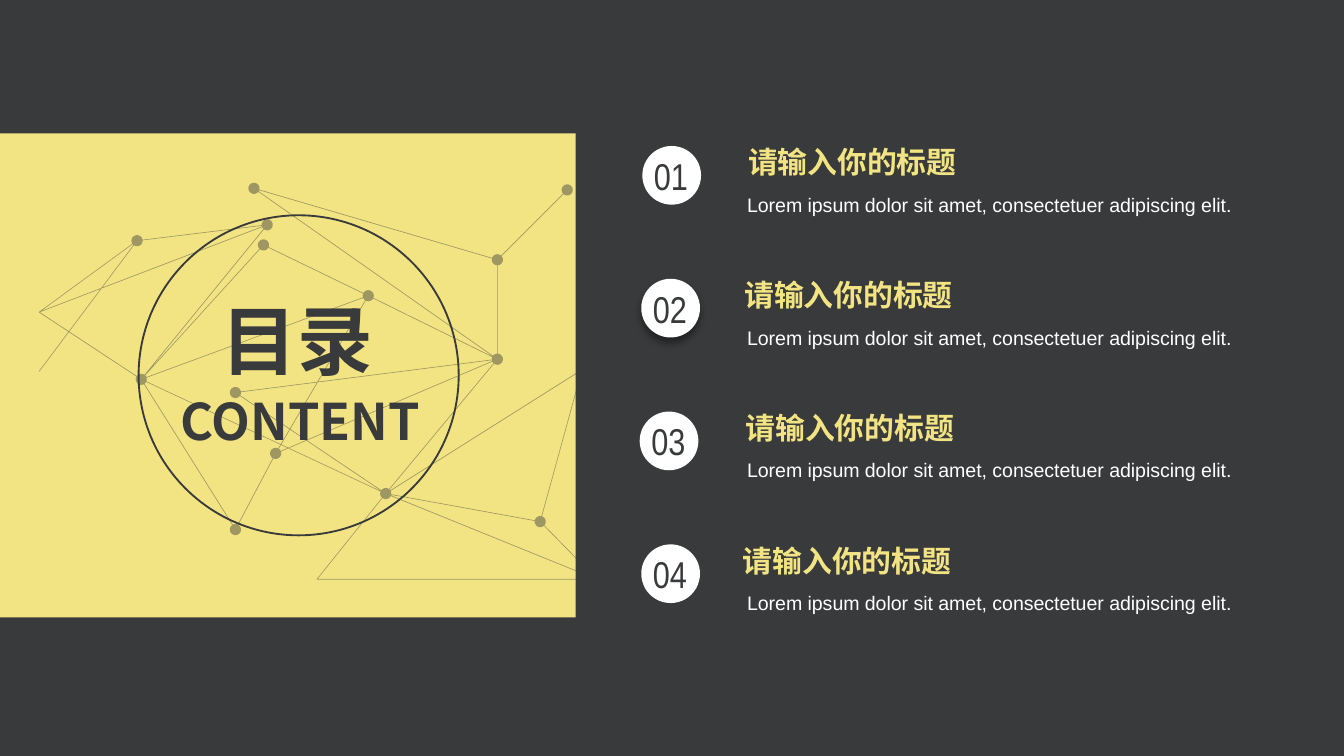
from dataclasses import dataclass
from math import cos, hypot, pi, sin

from lxml.etree import SubElement
from pptx import Presentation
from pptx.dml.color import RGBColor as RGB
from pptx.enum.shapes import MSO_SHAPE as Shape
from pptx.enum.text import MSO_ANCHOR as Anchor, MSO_AUTO_SIZE as Fit, PP_ALIGN as Align
from pptx.oxml.ns import qn
from pptx.util import Cm, Pt


@dataclass(frozen=True)
class Theme:
    dark: RGB = RGB(0x38, 0x3A, 0x3B)
    gold: RGB = RGB(0xF3, 0xE4, 0x83)
    white: RGB = RGB(0xFF, 0xFF, 0xFF)
    han: str = "Noto Sans CJK SC"
    sans: str = "Arial"
    slim: str = "Arial Narrow"
    title: float = 40.5
    sub: float = 27
    num: float = 20
    head: float = 16
    body: float = 10.5


T = Theme()

# Points of the line web, in cm from the panel's corner
DOTS = {
    "a": (4.80, 1.04), "b": (5.05, 1.73), "c": (4.98, 2.11), "d": (6.96, 3.07),
    "e": (9.40, 2.39), "f": (10.72, 1.07), "g": (9.40, 4.27), "h": (2.59, 2.03),
    "i": (2.67, 4.65), "j": (4.45, 4.90), "k": (5.21, 6.05), "l": (4.45, 7.49),
    "m": (7.29, 6.81), "n": (10.21, 7.34), "o": (11.00, 4.47),
}
ENDS = {"p": (0.74, 3.38), "q": (0.74, 4.50), "r": (5.99, 8.43), "s": (11.28, 8.43)}
EDGES = ("ae ag ef eg dg cd ci bi bh hp hq pb pi id jg jm il im dk kl kg "
         "mg mo mn mr ms rs ns no os").split()

HEAD = "请输入你的标题"
BODY = "Lorem ipsum dolor sit amet, consectetuer adipiscing elit."
# Left shift of each row's disc and heading, in cm
ROWS = [(0.05, 0.10), (0.03, 0.03), (0, 0.05), (0.03, 0)]


def place(shape, x, y, w, h):
    shape.left, shape.top, shape.width, shape.height = Cm(x), Cm(y), Cm(w), Cm(h)


def write(shape, text, font, size, color, bold=False, align=Align.LEFT):
    frame = shape.text_frame
    frame.text = text
    frame.word_wrap = True
    frame.auto_size = Fit.NONE
    frame.vertical_anchor = Anchor.MIDDLE
    para = frame.paragraphs[0]
    para.alignment = align
    run = para.runs[0]
    run.font.name, run.font.size, run.font.bold = font, Pt(size), bold
    run.font.color.rgb = color
    SubElement(run.font._element, qn("a:ea"), typeface=font)


def label(shapes, box, *args, **style):
    write(shapes.add_textbox(*map(Cm, box)), *args, **style)


def solid(shape, color):
    shape.shadow.inherit = False
    shape.fill.solid()
    shape.fill.fore_color.rgb = color
    shape.line.fill.background()


def web(shapes, left, top):
    """Draw the dots and the thin lines between them as one outline."""
    radius, half = 0.105, 0.006
    loops = [[(x + radius * cos(n * pi / 12), y + radius * sin(n * pi / 12))
              for n in range(24)] for x, y in DOTS.values()]
    points = DOTS | ENDS
    for a, b in EDGES:
        (x1, y1), (x2, y2) = points[a], points[b]
        size = hypot(x2 - x1, y2 - y1)
        ux, uy = (x2 - x1) / size, (y2 - y1) / size
        # Lines stop at the rim of a dot
        gap1, gap2 = (radius if key in DOTS else 0 for key in (a, b))
        x1, y1 = x1 + ux * gap1, y1 + uy * gap1
        x2, y2 = x2 - ux * gap2, y2 - uy * gap2
        dx, dy = -uy * half, ux * half
        loops.append([(x1 + dx, y1 + dy), (x2 + dx, y2 + dy),
                      (x2 - dx, y2 - dy), (x1 - dx, y1 - dy)])
    loops = [[(Cm(left + x), Cm(top + y)) for x, y in loop] for loop in loops]
    pen = shapes.build_freeform(*loops[0][0])
    for n, loop in enumerate(loops):
        if n:
            pen.move_to(*loop[0])
        pen.add_line_segments(loop[1:], close=True)
    net = pen.convert_to_shape()
    solid(net, T.dark)
    tint = net._element.spPr.find(qn("a:solidFill"))[0]
    SubElement(tint, qn("a:alpha"), val="45000")


def panel(slide, x, y, w, h):
    shapes = slide.shapes
    solid(shapes.add_shape(Shape.RECTANGLE, Cm(x), Cm(y), Cm(w), Cm(h)), T.gold)
    ring = shapes.add_shape(Shape.OVAL, Cm(x + 2.62), Cm(y + 1.55), Cm(6.05), Cm(6.05))
    ring.shadow.inherit = False
    ring.fill.background()
    ring.line.color.rgb = T.dark
    ring.line.width = Pt(1)
    web(shapes, x, y)
    title = shapes.title
    place(title, x + 3.07, y + 2.9, 5.11, 1.98)
    write(title, "目录", T.han, T.title, T.dark, True, Align.CENTER)
    shapes._spTree.append(title._element)  # bring in front of the panel
    label(shapes, (x + 3.02, y + 4.72, 5.31, 1.42), "CONTENT",
          T.han, T.sub, T.dark, bold=True, align=Align.CENTER)


def shade(shape):
    """Give the shape a soft shadow straight below it."""
    fx = shape._element.spPr.find(qn("a:effectLst"))
    drop = SubElement(fx, qn("a:outerShdw"), blurRad=str(Pt(4)), dist=str(Pt(3)),
                      dir="5400000", algn="t", rotWithShape="0")
    tint = SubElement(drop, qn("a:srgbClr"), val="000000")
    SubElement(tint, qn("a:alpha"), val="40000")


def entry(slide, x, y, num, disc_dx, head_dx):
    badge = slide.shapes.add_group_shape().shapes
    left = x + disc_dx
    disc = badge.add_shape(Shape.OVAL, Cm(left), Cm(y), Cm(1.11), Cm(1.11))
    solid(disc, T.white)
    if num == 2:
        shade(disc)
    label(badge, (left - 0.03, y, 1.24, 1.11), f"{num:02}", T.slim, T.num, T.dark)
    label(slide.shapes, (x + 1.78, y + 0.75, 11.5, 0.71), BODY, T.sans, T.body, T.white)
    label(slide.shapes, (x + 1.7 + head_dx, y - 0.17, 4.8, 0.94), HEAD,
          T.han, T.head, T.gold, bold=True)


def agenda(slide, x, y, pitch):
    for n, shifts in enumerate(ROWS):
        entry(slide, x, y + n * pitch, n + 1, *shifts)


def main():
    deck = Presentation()
    deck.slide_width, deck.slide_height = Cm(25.4), Cm(14.29)
    slide = deck.slides.add_slide(deck.slide_layouts[5])
    slide.background.fill.solid()
    slide.background.fill.fore_color.rgb = T.dark
    panel(slide, 0, 2.52, 10.88, 9.15)
    agenda(slide, 12.09, 2.76, 2.51)
    deck.save("out.pptx")


if __name__ == "__main__":
    main()
